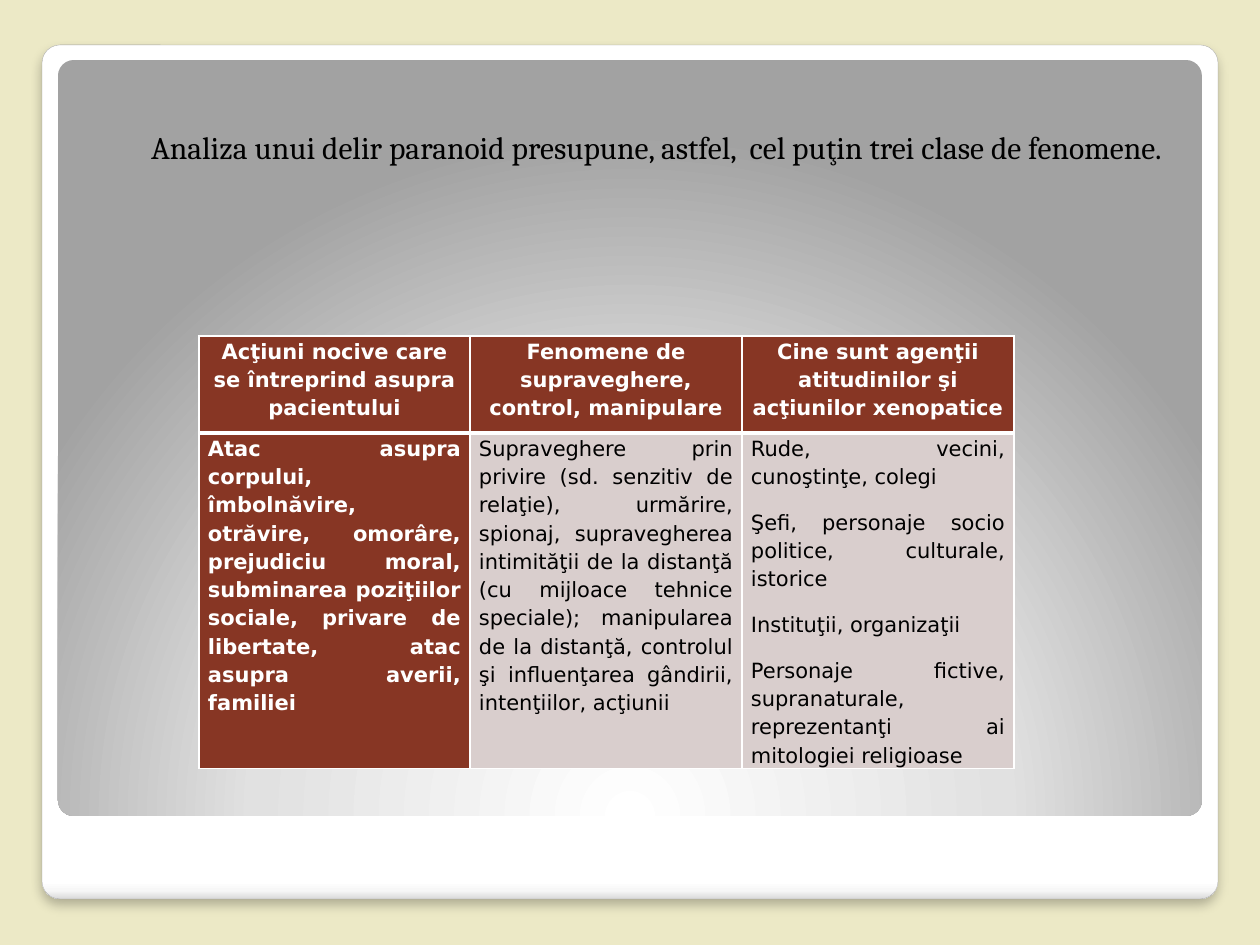
from pptx import Presentation
from pptx.dml.color import RGBColor
from pptx.enum.shapes import MSO_SHAPE
from pptx.enum.text import MSO_ANCHOR, PP_ALIGN
from pptx.oxml import parse_xml
from pptx.oxml.ns import nsdecls, qn
from pptx.util import Pt

ROUNDED = MSO_SHAPE.ROUNDED_RECTANGLE
MIDDLE = MSO_ANCHOR.MIDDLE
CENTER, JUSTIFY = PP_ALIGN.CENTER, PP_ALIGN.JUSTIFY
EMU_PER_PX = 914400 / 126
EMU_PER_POINT = 12700

BLACK, WHITE = "000000", "FFFFFF"
CREAM, BROWN, ROSE = "ECE9C6", "873624", "D9CECD"

VERTICAL = '<a:lin ang="5400000" scaled="0"/>'
GLOW = ('<a:path path="circle">'
        '<a:fillToRect l="50000" t="175000" r="50000" b="-75000"/></a:path>')

HEADERS = [
    "Acţiuni nocive care se întreprind asupra pacientului",
    "Fenomene de supraveghere, control, manipulare",
    "Cine sunt agenţii atitudinilor şi acţiunilor xenopatice",
]
CONTENT = [
    ["Atac asupra corpului, îmbolnăvire, otrăvire, omorâre, prejudiciu moral, "
     "subminarea poziţiilor sociale, privare de libertate, atac asupra averii, familiei"],
    ["Supraveghere prin privire (sd. senzitiv de relaţie), urmărire, spionaj, "
     "supravegherea intimităţii de la distanţă (cu mijloace tehnice speciale); "
     "manipularea de la distanţă, controlul şi influenţarea gândirii, intenţiilor, acţiunii"],
    ["Rude, vecini, cunoştinţe, colegi",
     "Şefi, personaje socio politice, culturale, istorice",
     "Instituţii, organizaţii",
     "Personaje fictive, supranaturale, reprezentanţi ai mitologiei religioase"],
]


def px(value):
    return round(value * EMU_PER_PX)


def color(hex_value):
    return RGBColor.from_string(hex_value)


def set_values(target, values):
    for name, value in values.items():
        setattr(target, name, value)


class SlideBuilder:
    title_font = {"name": "Cambria", "size": Pt(18)}
    table_font = {"name": "DejaVu Sans", "size": Pt(12)}
    table_spacing = {"line_spacing": 1.15, "space_after": Pt(10)}
    cell_margins = {"margin_left": px(9), "margin_right": px(9),
                    "margin_top": 0, "margin_bottom": 0}

    def __init__(self, slide):
        self.slide = slide

    def background(self, hex_value):
        fill = self.slide.background.fill
        fill.solid()
        fill.fore_color.rgb = color(hex_value)

    def panel(self, box, stops, direction, line=None, shadow=False):
        shape = self.slide.shapes.add_shape(ROUNDED, *map(px, box))
        shape.adjustments[0] = 0.021
        shape.shadow.inherit = False
        shape.fill.background()
        properties = shape.element.spPr
        stop_xml = "".join(
            f'<a:gs pos="{position * 1000}"><a:srgbClr val="{value}"/></a:gs>'
            for position, value in stops)
        gradient = parse_xml(f'<a:gradFill {nsdecls("a")} rotWithShape="1">'
                             f'<a:gsLst>{stop_xml}</a:gsLst>{direction}</a:gradFill>')
        properties.replace(properties.find(qn("a:noFill")), gradient)
        if line:
            shape.line.color.rgb = color(line)
            shape.line.width = Pt(0.16)
        else:
            shape.line.fill.background()
        if shadow:
            properties.find(qn("a:effectLst")).append(parse_xml(
                f'<a:outerShdw {nsdecls("a")} blurRad="{6 * EMU_PER_POINT}" '
                f'dist="{4 * EMU_PER_POINT}" dir="5400000" algn="t" rotWithShape="0">'
                f'<a:srgbClr val="{BLACK}"><a:alpha val="25000"/></a:srgbClr>'
                '</a:outerShdw>'))

    def add_lines(self, frame, lines, font, font_color, **spacing):
        for index, line in enumerate(lines):
            paragraph = frame.add_paragraph() if index else frame.paragraphs[0]
            set_values(paragraph, spacing)
            run = paragraph.add_run()
            run.text = line
            set_values(run.font, font)
            run.font.color.rgb = color(font_color)

    def title(self, box, text):
        frame = self.slide.shapes.add_textbox(*map(px, box)).text_frame
        # The deep bottom margin lifts the line above the middle of the box
        set_values(frame, {"word_wrap": True, "vertical_anchor": MIDDLE,
                           "margin_bottom": px(43)})
        self.add_lines(frame, [text], self.title_font, BLACK, alignment=CENTER)

    def borders(self, cell, widths):
        properties = cell._tc.get_or_add_tcPr()
        for side, points in widths.items():
            properties.append(parse_xml(
                f'<a:ln{side} {nsdecls("a")} w="{points * EMU_PER_POINT}">'
                f'<a:solidFill><a:srgbClr val="{WHITE}"/></a:solidFill></a:ln{side}>'))

    def cell(self, cell, lines, fill, font_color, bold, alignment, widths):
        set_values(cell, self.cell_margins)
        self.borders(cell, widths)
        cell.fill.solid()
        cell.fill.fore_color.rgb = color(fill)
        self.add_lines(cell.text_frame, lines, {**self.table_font, "bold": bold},
                       font_color, alignment=alignment, **self.table_spacing)

    def table(self, left, top, widths, heights, headers, content):
        table = self.slide.shapes.add_table(
            2, len(headers), px(left), px(top), px(sum(widths)), px(sum(heights))).table
        set_values(table, {"first_row": False, "horz_banding": False})
        for column, width in zip(table.columns, widths):
            column.width = px(width)
        for row, height in zip(table.rows, heights):
            row.height = px(height)
        for index, (header, lines) in enumerate(zip(headers, content)):
            self.cell(table.cell(0, index), [header], BROWN, WHITE, True, CENTER,
                      {"L": 1, "R": 1, "T": 1, "B": 3})
            first = index == 0
            self.cell(table.cell(1, index), lines, BROWN if first else ROSE,
                      WHITE if first else BLACK, first, JUSTIFY,
                      {"L": 1, "R": 1, "T": 3, "B": 1})


def main():
    presentation = Presentation()
    presentation.slide_width, presentation.slide_height = px(1260), px(945)
    builder = SlideBuilder(presentation.slides.add_slide(presentation.slide_layouts[6]))

    # Background and the two nested panels
    builder.background(CREAM)
    builder.panel((42, 45, 1176, 854),
                  [(0, WHITE), (98, WHITE), (99, "F7F7F7"), (100, "DADADA")],
                  VERTICAL, line="A4A4A4", shadow=True)
    builder.panel((58, 60, 1144, 756),
                  [(0, WHITE), (55, "E1E1E1"), (100, "A2A2A2")], GLOW)

    # Table of phenomena
    builder.table(199, 336, [271, 272, 272], [97, 292], HEADERS, CONTENT)

    # Title
    builder.title((126, 102, 1061, 127),
                  "Analiza unui delir paranoid presupune, astfel,  "
                  "cel puţin trei clase de fenomene.")

    presentation.save("out.pptx")


if __name__ == "__main__":
    main()
